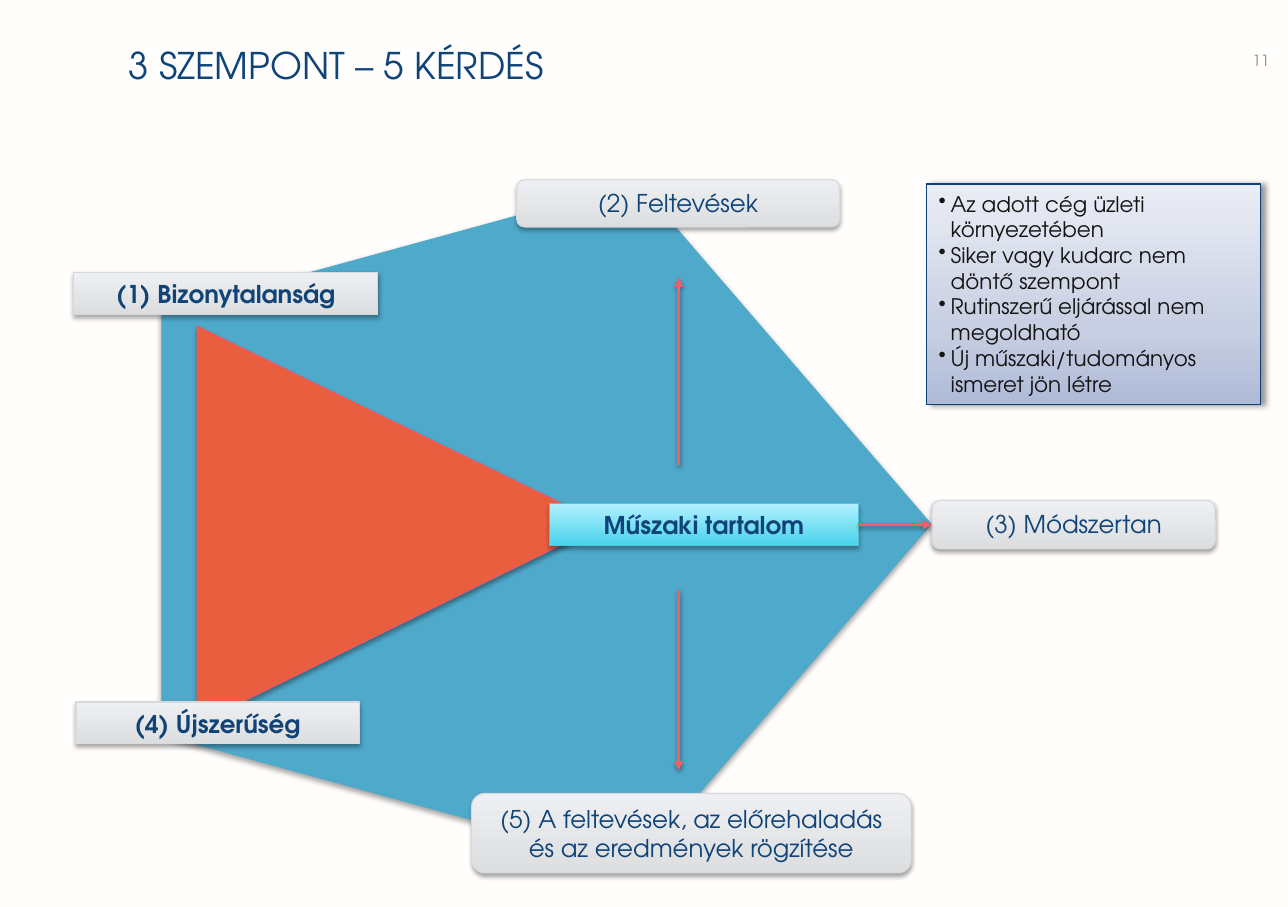
"""Build the slide that links three criteria with five questions."""
from copy import deepcopy

from lxml import etree
from pptx import Presentation
from pptx import util as u
from pptx.dml.color import RGBColor
from pptx.enum import shapes, text
from pptx.oxml import ns

NAVY = RGBColor(0x10, 0x43, 0x77)
INK = RGBColor(0x14, 0x13, 0x13)
GRAY = RGBColor(0x8A, 0x8A, 0x8A)
BLACK = RGBColor(0, 0, 0)
PAPER = RGBColor(0xFF, 0xFE, 0xFD)
BLUE = RGBColor(0x4F, 0xA9, 0xCB)
ORANGE = RGBColor(0xE9, 0x5E, 0x3F)
ORANGE_EDGE = RGBColor(0xED, 0x59, 0x63)
ARROW = RGBColor(0xEF, 0x5F, 0x68)
SILVER_EDGE = RGBColor(0xD8, 0xD9, 0xDB)
CYAN_EDGE = RGBColor(0x57, 0xC4, 0xD6)
NOTE_EDGE = RGBColor(0x0D, 0x41, 0x77)
SILVER = [(0, RGBColor(0xDD, 0xDE, 0xE0)), (1, RGBColor(0xED, 0xEF, 0xF2))]
CYAN = [(0, RGBColor(0x49, 0xD3, 0xEB)), (1, RGBColor(0xB2, 0xF0, 0xFF))]
NOTE = [(0, RGBColor(0xAF, 0xBA, 0xD8)), (0.35, RGBColor(0xC8, 0xCF, 0xE2)),
        (1, RGBColor(0xEA, 0xED, 0xF5))]

KIND = shapes.MSO_SHAPE
ALIGN = text.PP_ALIGN


def add_xml(parent, tag, **attributes):
    """Append a DrawingML element and return it."""
    values = {name: str(value) for name, value in attributes.items()}
    return etree.SubElement(parent, ns.qn(tag), values)


def write(shape, *lines, size=16, color=NAVY, bold=False, align=ALIGN.LEFT,
          anchor=text.MSO_ANCHOR.TOP, bullet=None, grow=False, font="TeX Gyre Adventor"):
    """Fill a shape with formatted paragraphs."""
    frame = shape.text_frame
    frame.word_wrap = True
    frame.vertical_anchor = anchor
    frame.margin_left = frame.margin_right = u.Inches(0.11)
    frame.margin_top = frame.margin_bottom = u.Inches(0.06)
    if grow:
        frame.auto_size = text.MSO_AUTO_SIZE.SHAPE_TO_FIT_TEXT
    for number, line in enumerate(lines):
        paragraph = frame.add_paragraph() if number else frame.paragraphs[0]
        paragraph.alignment = align
        if bullet:
            properties = paragraph._p.get_or_add_pPr()
            properties.set("marL", str(u.Inches(0.11)))
            properties.set("indent", str(u.Inches(-0.11)))
            add_xml(properties, "a:buChar", char=bullet)
        run = paragraph.add_run()
        run.text = line
        run.font.name = font
        run.font.size = u.Pt(size)
        run.font.bold = bold
        run.font.color.rgb = color


class Canvas:
    """Hold the slide and the shared look of its elements."""

    def __init__(self, slide):
        """Start on a slide with the paper background."""
        self.slide = slide
        slide.background.fill.solid()
        slide.background.fill.fore_color.rgb = PAPER

    def shadow(self, element, alpha=35, blur=3.1, distance=1.8, angle=90):
        """Give an element a soft outer shadow."""
        properties = element._element.spPr
        effects = properties.find(ns.qn("a:effectLst"))
        if effects is None:
            effects = add_xml(properties, "a:effectLst")
        outer = add_xml(effects, "a:outerShdw", blurRad=u.Pt(blur), dist=u.Pt(distance),
                        dir=angle * 60000, rotWithShape=0)
        tint = add_xml(outer, "a:srgbClr", val=BLACK)
        add_xml(tint, "a:alpha", val=alpha * 1000)

    def gradient(self, shape, stops):
        """Fill a shape from bottom to top with colour stops."""
        shape.fill.gradient()
        shape.fill.gradient_angle = 90
        stop_list = shape._element.spPr.find(".//" + ns.qn("a:gsLst"))
        for _ in stops[2:]:
            stop_list.append(deepcopy(stop_list[0]))
        for stop, (position, color) in zip(shape.fill.gradient_stops, stops):
            stop.position = position
            stop.color.rgb = color

    def shape(self, kind, box, fill, edge=None, rotation=0, **shadow):
        """Add a shape with a plain or graded fill."""
        shape = self.slide.shapes.add_shape(kind, *map(u.Inches, box))
        shape.rotation = rotation
        shape.shadow.inherit = False
        if isinstance(fill, list):
            self.gradient(shape, fill)
        else:
            shape.fill.solid()
            shape.fill.fore_color.rgb = fill
        if edge is None:
            shape.line.fill.background()
        else:
            shape.line.color.rgb = edge
            shape.line.width = u.Pt(0.75)
        self.shadow(shape, **shadow)
        return shape

    def label(self, kind, box, line, fill=SILVER, edge=SILVER_EDGE):
        """Add a centred label, bold when it is a square box."""
        shape = self.shape(kind, box, fill, edge)
        write(shape, line, bold=kind == KIND.RECTANGLE, align=ALIGN.CENTER, grow=True)
        return shape

    def textbox(self, box, line, **style):
        """Add a plain text box."""
        write(self.slide.shapes.add_textbox(*map(u.Inches, box)), line, **style)

    def arrow(self, start, end):
        """Add a straight arrow."""
        connector = self.slide.shapes.add_connector(
            shapes.MSO_CONNECTOR.STRAIGHT, *map(u.Inches, start + end))
        connector.line.color.rgb = ARROW
        connector.line.width = u.Pt(2)
        add_xml(connector.line._get_or_add_ln(), "a:tailEnd", type="triangle")
        self.shadow(connector, alpha=38, distance=1.6)
        return connector


def main():
    """Build and save the slide."""
    presentation = Presentation()
    presentation.slide_width = u.Inches(11.69)
    presentation.slide_height = u.Inches(8.23)
    canvas = Canvas(presentation.slides.add_slide(presentation.slide_layouts[6]))

    canvas.textbox((1.06, 0.33, 7.92, 0.91), "3 SZEMPONT – 5 KÉRDÉS", size=24)
    canvas.textbox((10.29, 0.33, 1.34, 0.44), "11", size=10, color=GRAY,
                   align=ALIGN.RIGHT, anchor=text.MSO_ANCHOR.MIDDLE)

    canvas.shape(KIND.REGULAR_PENTAGON, (1.86, 1.26, 6.2, 6.99), BLUE, rotation=90)
    triangle = canvas.shape(KIND.ISOSCELES_TRIANGLE, (1.83, 2.92, 3.61, 3.69),
                            ORANGE, ORANGE_EDGE, rotation=90)
    triangle.adjustments[0] = 0.497

    canvas.label(KIND.RECTANGLE, (0.67, 2.47, 2.76, 0.38), "(1) Bizonytalanság")
    canvas.label(KIND.RECTANGLE, (0.69, 6.37, 2.57, 0.38), "(4) Újszerűség")
    content = canvas.label(KIND.RECTANGLE, (4.99, 4.57, 2.8, 0.38), "Műszaki tartalom",
                           CYAN, CYAN_EDGE)
    canvas.label(KIND.ROUNDED_RECTANGLE, (4.69, 1.63, 2.93, 0.43), "(2) Feltevések")
    method = canvas.label(KIND.ROUNDED_RECTANGLE, (8.46, 4.54, 2.57, 0.44), "(3) Módszertan")
    canvas.label(KIND.ROUNDED_RECTANGLE, (4.28, 7.2, 3.99, 0.72),
                 "(5) A feltevések, az előrehaladás és az eredmények rögzítése")

    canvas.arrow((6.16, 4.22), (6.16, 2.52))
    link = canvas.arrow((7.79, 4.76), (8.46, 4.76))
    link.begin_connect(content, 3)
    link.end_connect(method, 1)
    canvas.arrow((6.16, 5.35), (6.16, 6.99))

    note = canvas.shape(KIND.RECTANGLE, (8.41, 1.67, 3.03, 2), NOTE, NOTE_EDGE,
                        alpha=40, blur=4, distance=3, angle=0)
    write(note, "Az adott cég üzleti környezetében", "Siker vagy kudarc nem döntő szempont",
          "Rutinszerű eljárással nem megoldható", "Új műszaki/tudományos ismeret jön létre",
          size=14, color=INK, bullet="•", grow=True)

    presentation.save("out.pptx")


if __name__ == "__main__":
    main()
